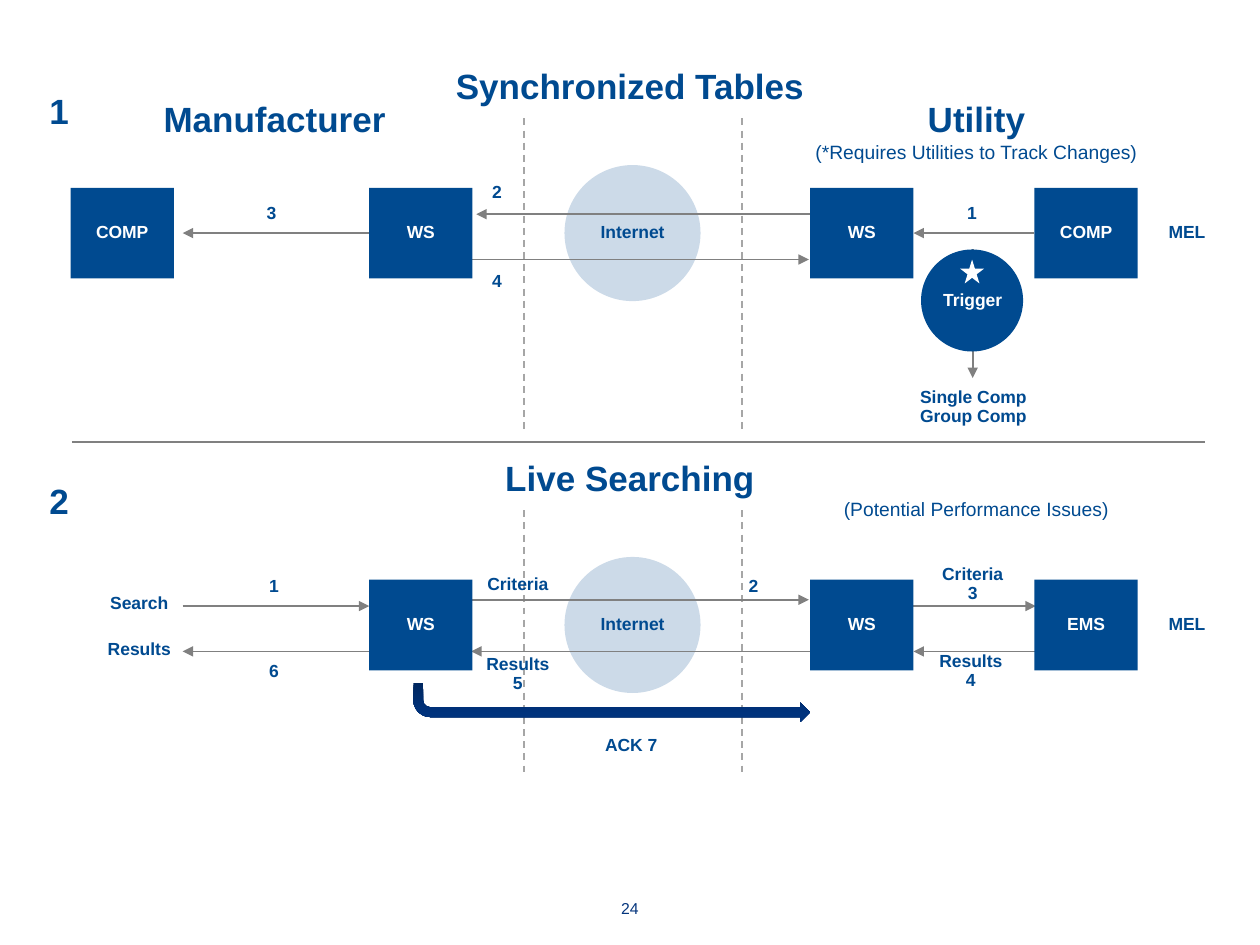
import pptx
import pptx.dml.color
import pptx.enum.dml
import pptx.enum.shapes
import pptx.enum.text
import pptx.oxml.ns
import pptx.util
from lxml import etree

Inches = pptx.util.Inches
SHAPE = pptx.enum.shapes.MSO_SHAPE
ANCHOR = pptx.enum.text.MSO_ANCHOR
qn = pptx.oxml.ns.qn

BLUE, WHITE, GRAY, LIGHT_GRAY = "004A90", "FFFFFF", "808080", "A6A6A6"
BOX_W, BOX_H = 0.82, 0.72
LABEL_H = 0.32
LEFT_WS, RIGHT_WS, RIGHT_END = 2.93, 6.43, 8.21  # box columns
ROW_1, ROW_2 = 1.49, 4.6  # box tops


def rgb(color):
    return pptx.dml.color.RGBColor.from_string(color)


def write(s, text, size=10, bold=True, color=BLUE, spacing=0.9,
          anchor=ANCHOR.MIDDLE, inset=None):
    tf = s.text_frame
    tf.word_wrap = True
    tf.vertical_anchor = anchor
    if inset is not None:
        tf.margin_left = tf.margin_right = Inches(inset)
        tf.margin_top = tf.margin_bottom = Inches(inset)
    for i, line in enumerate(text.split("\n")):
        p = tf.add_paragraph() if i else tf.paragraphs[0]
        p.alignment = pptx.enum.text.PP_ALIGN.CENTER
        if spacing:
            p.line_spacing = spacing
        r = p.add_run()
        r.text = line
        r.font.name = "Arial"
        r.font.size = pptx.util.Pt(size)
        r.font.bold = bold
        r.font.color.rgb = rgb(color)


def add_label(sp, text, x, y, w, h=LABEL_H, **fmt):
    s = sp.add_textbox(Inches(x), Inches(y), Inches(w), Inches(h))
    write(s, text, **fmt)


def add_heading(sp, text, x, y, h=0.5, size=20, bold=True):
    add_label(sp, text, x, y, 3.44, h, size=size, bold=bold,
              spacing=None, anchor=ANCHOR.TOP, inset=0)


def add_solid(sp, kind, x, y, w, h, color=BLUE, alpha=None):
    s = sp.add_shape(kind, Inches(x), Inches(y), Inches(w), Inches(h))
    s.shadow.inherit = False
    s.line.fill.background()
    s.fill.solid()
    s.fill.fore_color.rgb = rgb(color)
    if alpha:
        clr = s.fill._xPr.find(".//" + qn("a:srgbClr"))
        etree.SubElement(clr, qn("a:alpha")).set("val", str(alpha * 1000))
    return s


def add_box(sp, text, x, y):
    s = add_solid(sp, SHAPE.RECTANGLE, x, y, BOX_W, BOX_H)
    write(s, text, color=WHITE)
    return s


def add_line(sp, x1, y1, x2, y2, color=GRAY, arrow=False, dashed=False):
    s = sp.add_connector(pptx.enum.shapes.MSO_CONNECTOR.STRAIGHT,
                         Inches(x1), Inches(y1), Inches(x2), Inches(y2))
    s.line.color.rgb = rgb(color)
    s.line.width = pptx.util.Pt(1)
    if dashed:
        s.line.dash_style = pptx.enum.dml.MSO_LINE.DASH
    if arrow:
        ln = s.line._get_or_add_ln()
        etree.SubElement(ln, qn("a:tailEnd")).set("type", "triangle")
    etree.SubElement(s._element.spPr, qn("a:effectLst"))
    return s


def add_bent_arrow(sp, x, y, w, h):
    s = add_solid(sp, SHAPE.BENT_ARROW, x, y, w, h)
    s._element.spPr.find(qn("a:xfrm")).set("flipV", "1")
    s.fill.gradient()
    s.fill.gradient_angle = 90
    stops = ((0, "002760"), (0.8, "00337D"))
    for stop, (position, color) in zip(s.fill.gradient_stops, stops):
        stop.position = position
        stop.color.rgb = rgb(color)


def add_network(sp, row, top, bottom):
    """Internet circle between two dashed boundaries, with the MEL label."""
    add_solid(sp, SHAPE.OVAL, 4.48, row - 0.18, 1.08, 1.08, alpha=20)
    for x in (4.16, 5.89):
        add_line(sp, x, top, x, bottom, LIGHT_GRAY, dashed=True)
    add_label(sp, "Internet", 4.61, row, BOX_W, BOX_H)
    add_label(sp, "MEL", 9.01, row, BOX_W, BOX_H)


def add_synchronized_tables(sp):
    add_heading(sp, "Synchronized Tables", 3.28, 0.51)
    add_heading(sp, "Manufacturer", 0.46, 0.77)
    add_heading(sp, "Utility", 6.03, 0.77)
    add_heading(sp, "(*Requires Utilities to Track Changes)", 6.03, 1.11,
                h=0.25, size=11, bold=False)
    add_label(sp, "1", 0.26, 0.74, 0.42, size=20)

    # Trigger and its output
    add_line(sp, 7.72, 1.98, 7.72, 3, arrow=True)
    add_solid(sp, SHAPE.OVAL, 7.31, 1.98, 0.81, 0.81)
    add_solid(sp, SHAPE.STAR_5_POINT, 7.62, 2.06, 0.19, 0.19, WHITE)
    add_label(sp, "Trigger", 7.31, 2.03, BOX_W, BOX_H, color=WHITE)
    add_label(sp, "Single Comp\nGroup Comp", 6.75, 3.07, 1.95)

    # Exchange across the network
    add_network(sp, ROW_1, 0.94, 3.43)
    add_line(sp, 6.76, 1.7, 3.78, 1.7, arrow=True)
    add_line(sp, 3.45, 2.06, 6.42, 2.06, arrow=True)

    # Systems and their direct links
    add_box(sp, "COMP", 0.56, ROW_1)
    left_ws = add_box(sp, "WS", LEFT_WS, ROW_1)
    right_ws = add_box(sp, "WS", RIGHT_WS, ROW_1)
    comp = add_box(sp, "COMP", RIGHT_END, ROW_1)
    add_line(sp, 2.93, 1.85, 1.45, 1.85, arrow=True).begin_connect(left_ws, 1)
    link = add_line(sp, 8.21, 1.85, 7.25, 1.85, arrow=True)
    link.begin_connect(comp, 1)
    link.end_connect(right_ws, 3)

    # Step numbers
    for text, x, y, w in (("3", 1.37, 1.54, 1.57), ("2", 3.73, 1.37, 0.43),
                          ("4", 3.73, 2.08, 0.43), ("1", 7.23, 1.54, 0.97)):
        add_label(sp, text, x, y, w)


def add_live_searching(sp):
    add_heading(sp, "Live Searching", 3.28, 3.62)
    add_heading(sp, "(Potential Performance Issues)", 6.03, 3.95,
                h=0.25, size=11, bold=False)
    add_label(sp, "2", 0.26, 3.83, 0.42, size=20)

    # Requests run right, results run left
    add_network(sp, ROW_2, 4.05, 6.15)
    for x1, x2, y in ((1.45, 2.93, 4.81), (3.45, 6.42, 4.76),
                      (6.74, 8.22, 4.81), (8.73, 7.25, 5.17),
                      (6.72, 3.74, 5.17), (2.93, 1.45, 5.17)):
        add_line(sp, x1, y, x2, y, arrow=True)

    # Systems
    for text, x in (("WS", LEFT_WS), ("WS", RIGHT_WS), ("EMS", RIGHT_END)):
        add_box(sp, text, x, ROW_2)
    add_bent_arrow(sp, 3.28, 5.42, 3.15, 0.31)

    # Step labels
    for text, x, y, w in (
            ("Search", 0.13, 4.63, 1.95), ("Results", 0.13, 5, 1.95),
            ("1", 1.66, 4.5, 1.03), ("6", 1.66, 5.17, 1.03),
            ("Criteria", 3.73, 4.48, 0.76), ("Results\n5", 3.73, 5.19, 0.76),
            ("2", 5.54, 4.5, 0.88), ("Criteria\n3", 7.34, 4.48, 0.76),
            ("Results\n4", 7.25, 5.17, 0.91), ("ACK 7", 4.63, 5.76, 0.76)):
        add_label(sp, text, x, y, w)


def main():
    prs = pptx.Presentation()
    prs.slide_width, prs.slide_height = Inches(10), Inches(7.5)
    sp = prs.slides.add_slide(prs.slide_layouts[6]).shapes

    add_synchronized_tables(sp)
    add_line(sp, 0.57, 3.51, 9.56, 3.51)
    add_live_searching(sp)

    # Page number
    add_label(sp, "24", 0, 7, 10, 0.42, size=9, bold=False, color="04357D",
              spacing=None, inset=0)
    prs.save("out.pptx")


if __name__ == "__main__":
    main()
